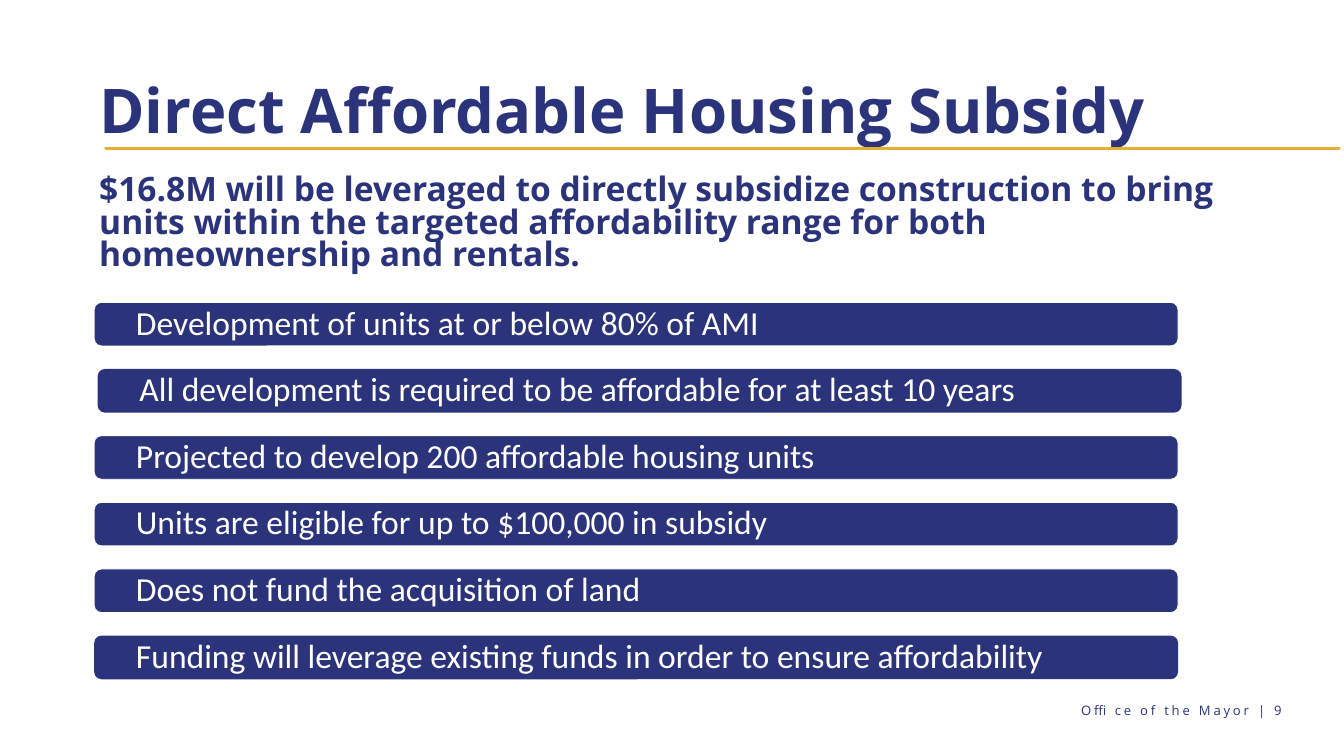
from dataclasses import dataclass

from lxml import etree
from pptx import Presentation
from pptx import util as u
from pptx.dml.color import RGBColor
from pptx.enum import shapes, text
from pptx.oxml import ns
from pptx.shapes.base import BaseShape

NAVY = RGBColor(0x2B, 0x34, 0x7B)
GOLD = RGBColor(0xE4, 0xB0, 0x31)
WHITE = RGBColor(0xFF, 0xFF, 0xFF)

BAR_LEFT, BAR_TOP, BAR_WIDTH, BAR_HEIGHT = 3.56, 11.43, 40.97, 1.65
BAR_PITCH = 2.52


@dataclass(frozen=True)
class Bar:
    label: str
    indent: float = 0
    outlined: bool = True


BARS = [
    Bar("Development of units at or below 80% of AMI"),
    Bar("All development is required to be affordable for at least 10 years", indent=0.13, outlined=False),
    Bar("Projected to develop 200 affordable housing units"),
    Bar("Units are eligible for up to $100,000 in subsidy"),
    Bar("Does not fund the acquisition of land"),
    Bar("Funding will leverage existing funds in order to ensure affordability", outlined=False),
]


def write_text(shape: BaseShape, content: str, *, size: float, font: str = "Open Sans",
               color: RGBColor = NAVY, bold: bool = False, line_spacing: float = 1,
               align: text.PP_ALIGN = text.PP_ALIGN.LEFT,
               anchor: text.MSO_ANCHOR = text.MSO_ANCHOR.TOP,
               side_margin: float = 0.25, end_margin: float = 0.13, tracking: float = 0) -> None:
    frame = shape.text_frame
    frame.word_wrap = True
    frame.vertical_anchor = anchor
    frame.margin_left = frame.margin_right = u.Cm(side_margin)
    frame.margin_top = frame.margin_bottom = u.Cm(end_margin)
    paragraph = frame.paragraphs[0]
    paragraph.alignment = align
    paragraph.line_spacing = line_spacing
    run = paragraph.add_run()
    run.text = content
    run.font.name = font
    run.font.size = u.Pt(size)
    run.font.bold = bold
    run.font.color.rgb = color
    if tracking:
        run._r.get_or_add_rPr().set("spc", str(round(tracking * 100)))


def add_text_box(slide, left: float, top: float, width: float, height: float) -> BaseShape:
    return slide.shapes.add_textbox(u.Cm(left), u.Cm(top), u.Cm(width), u.Cm(height))


def add_rule(slide, left: float, right: float, top: float) -> None:
    rule = slide.shapes.add_connector(
        shapes.MSO_CONNECTOR.STRAIGHT, u.Cm(left), u.Cm(top), u.Cm(right), u.Cm(top))
    rule.line.color.rgb = GOLD
    rule.line.width = u.Pt(4)
    rule.line._get_or_add_ln().set("cap", "rnd")
    etree.SubElement(rule._element.spPr, ns.qn("a:effectLst"))


def add_bar(slide, bar: Bar, top: float) -> None:
    shape = slide.shapes.add_shape(
        shapes.MSO_SHAPE.ROUNDED_RECTANGLE,
        u.Cm(BAR_LEFT + bar.indent), u.Cm(top), u.Cm(BAR_WIDTH), u.Cm(BAR_HEIGHT))
    shape.shadow.inherit = False
    shape.fill.solid()
    shape.fill.fore_color.rgb = NAVY
    if bar.outlined:
        shape.line.color.rgb = WHITE
        shape.line.width = u.Pt(1)
    else:
        shape.line.fill.background()
    write_text(shape, bar.label, size=36, font="Calibri", color=WHITE, line_spacing=0.9,
               anchor=text.MSO_ANCHOR.MIDDLE, side_margin=1.5, end_margin=0)


def main() -> None:
    presentation = Presentation()
    presentation.slide_width = u.Cm(50.8)
    presentation.slide_height = u.Cm(28.58)
    slide = presentation.slides.add_slide(presentation.slide_layouts[6])

    title = add_text_box(slide, 3.5, 1.52, 43.8, 5.51)
    write_text(title, "Direct Affordable Housing Subsidy", size=66, bold=True,
               line_spacing=0.9, anchor=text.MSO_ANCHOR.MIDDLE)
    summary = add_text_box(slide, 3.5, 6.53, 43.8, 4.6)
    write_text(summary, "$16.8M will be leveraged to directly subsidize construction to bring "
               "units within the targeted affordability range for both homeownership and rentals.",
               size=36, bold=True, line_spacing=0.8)
    footer = add_text_box(slide, 37.69, 26.57, 11, 0.61)
    write_text(footer, "Office of the Mayor | 9 ", size=14, align=text.PP_ALIGN.RIGHT,
               side_margin=0, end_margin=0, tracking=3)

    add_rule(slide, 4.01, 50.6, 5.61)
    for index, bar in enumerate(BARS):
        add_bar(slide, bar, BAR_TOP + index * BAR_PITCH)

    presentation.save("out.pptx")


if __name__ == "__main__":
    main()
